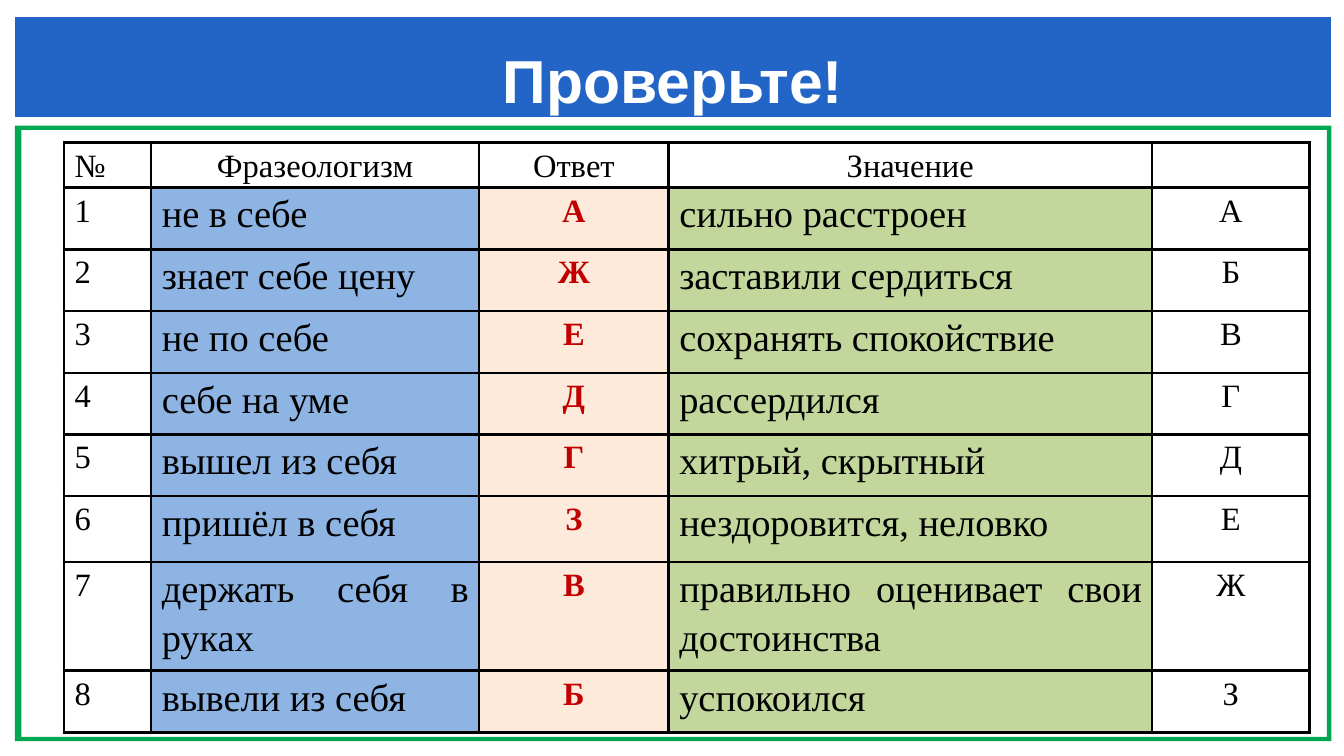
import pptx
import pptx.util
import pptx.dml.color
import pptx.enum.text
from lxml import etree
from pptx.oxml.ns import qn

Inches = pptx.util.Inches
RGBColor = pptx.dml.color.RGBColor
ALIGN = pptx.enum.text.PP_ALIGN

WIDTH, HEIGHT = 6.31, 3.55
UNITS_PER_INCH = 100
BLACK = RGBColor(0x00, 0x00, 0x00)
WHITE = RGBColor(0xFF, 0xFF, 0xFF)
GREEN = RGBColor(0x00, 0xA6, 0x50)
BLUE = RGBColor(0x23, 0x65, 0xC7)
RED = RGBColor(0xC0, 0x00, 0x00)
SKY = RGBColor(0x8E, 0xB4, 0xE3)
PEACH = RGBColor(0xFD, 0xEA, 0xDA)
OLIVE = RGBColor(0xC3, 0xD6, 0x9B)

COLUMN_WIDTHS = [0.41, 1.54, 0.89, 2.27, 0.74]
ROW_HEIGHTS = [0.1] + [0.29] * 5 + [0.31, 0.51, 0.29]
HEADINGS = ["№", "Фразеологизм", "Ответ", "Значение", ""]
LETTERS = "АБВГДЕЖЗ"
IDIOMS = [
    ("не в себе", "А", "сильно расстроен"),
    ("знает себе цену", "Ж", "заставили сердиться"),
    ("не по себе", "Е", "сохранять спокойствие"),
    ("себе на уме", "Д", "рассердился"),
    ("вышел из себя", "Г", "хитрый, скрытный"),
    ("пришёл в себя", "З", "нездоровится, неловко"),
    ("держать себя в руках", "В", "правильно оценивает свои достоинства"),
    ("вывели из себя", "Б", "успокоился"),
]

PLAIN = {"name": "Times New Roman", "size": 11, "bold": False, "color": BLACK}
PHRASE = {**PLAIN, "size": 13}
ANSWER = {**PLAIN, "bold": True, "color": RED}
TITLE = {"name": "Arial", "size": 20.5, "bold": True, "color": WHITE}

HEADING_STYLES = [(ALIGN.JUSTIFY, PLAIN, None)] + [(ALIGN.CENTER, PLAIN, None)] * 4
BODY_STYLES = [
    (ALIGN.JUSTIFY, PLAIN, None),
    (ALIGN.JUSTIFY, PHRASE, SKY),
    (ALIGN.CENTER, ANSWER, PEACH),
    (ALIGN.JUSTIFY, PHRASE, OLIVE),
    (ALIGN.CENTER, PLAIN, None),
]


def set_margins(target, side):
    margins = {"margin_left": side, "margin_right": side, "margin_top": 0, "margin_bottom": 0}
    for name, value in margins.items():
        setattr(target, name, Inches(value))


def write(p, text, style, align):
    p.alignment = align
    if not text:
        etree.SubElement(p._p, qn("a:endParaRPr"), sz=str(style["size"] * 100))
        return
    r = p.add_run()
    r.text = text
    values = {**style, "size": pptx.util.Pt(style["size"])}
    r.font.color.rgb = values.pop("color")
    for name, value in values.items():
        setattr(r.font, name, value)


def add_outline(s, color, *boxes):
    """Fill one box, or the area between two nested boxes, with a colour."""
    builder = None
    for box in boxes:
        x, y, w, h = (round(v * UNITS_PER_INCH) for v in box)
        if builder is None:
            builder = s.shapes.build_freeform(x, y, scale=Inches(1) / UNITS_PER_INCH)
        else:
            builder.move_to(x, y)
        builder.add_line_segments([(x + w, y), (x + w, y + h), (x, y + h)], close=True)
    sp = builder.convert_to_shape()
    sp.shadow.inherit = False
    sp.fill.solid()
    sp.fill.fore_color.rgb = color
    sp.line.fill.background()


def add_header(s, x, y, w, h):
    add_outline(s, BLUE, (x, y, w, h))
    inset = 0.25
    box = s.shapes.add_textbox(Inches(x + inset), Inches(y + 0.26 * h),
                               Inches(w - 2 * inset), Inches(0.74 * h))
    tf = box.text_frame
    tf.word_wrap = True
    set_margins(tf, 0)
    write(tf.paragraphs[0], "Проверьте!", TITLE, ALIGN.CENTER)


def add_frame(s, x, y, w, h):
    edge = 0.02
    add_outline(s, GREEN, (x, y, w, h),
                (x + 0.03, y + edge, w - 0.03 - edge, h - 2 * edge))


def add_borders(cell):
    tcPr = cell._tc.get_or_add_tcPr()
    for side in ("lnL", "lnR", "lnT", "lnB"):
        ln = etree.SubElement(tcPr, qn("a:" + side), w=str(pptx.util.Pt(1)))
        fill = etree.SubElement(ln, qn("a:solidFill"))
        etree.SubElement(fill, qn("a:srgbClr"), val=str(BLACK))


def fill_cell(cell, text, align, style, color):
    add_borders(cell)
    if color is None:
        cell.fill.background()
    else:
        cell.fill.solid()
        cell.fill.fore_color.rgb = color
    set_margins(cell, 0.05)
    p = cell.text_frame.paragraphs[0]
    p.line_spacing = 1.15
    write(p, text, style, align)


def add_answers(s, x, y):
    rows = [HEADINGS] + [
        [str(i), *idiom, letter]
        for i, (idiom, letter) in enumerate(zip(IDIOMS, LETTERS), 1)
    ]
    table = s.shapes.add_table(
        len(rows), len(HEADINGS), Inches(x), Inches(y),
        Inches(sum(COLUMN_WIDTHS)), Inches(sum(ROW_HEIGHTS))).table
    table.first_row = table.horz_banding = False
    for column, width in zip(table.columns, COLUMN_WIDTHS):
        column.width = Inches(width)
    for i, (row, height) in enumerate(zip(table.rows, ROW_HEIGHTS)):
        row.height = Inches(height)
        styles = BODY_STYLES if i else HEADING_STYLES
        for cell, text, style in zip(row.cells, rows[i], styles):
            fill_cell(cell, text, *style)


def main():
    prs = pptx.Presentation()
    prs.slide_width, prs.slide_height = Inches(WIDTH), Inches(HEIGHT)
    s = prs.slides.add_slide(prs.slide_layouts[6])
    left, width = 0.07, 6.18
    add_frame(s, left, 0.59, width, 2.89)
    add_header(s, left, 0.08, width, 0.47)
    add_answers(s, left + 0.23, 0.67)
    prs.save("out.pptx")


if __name__ == "__main__":
    main()
